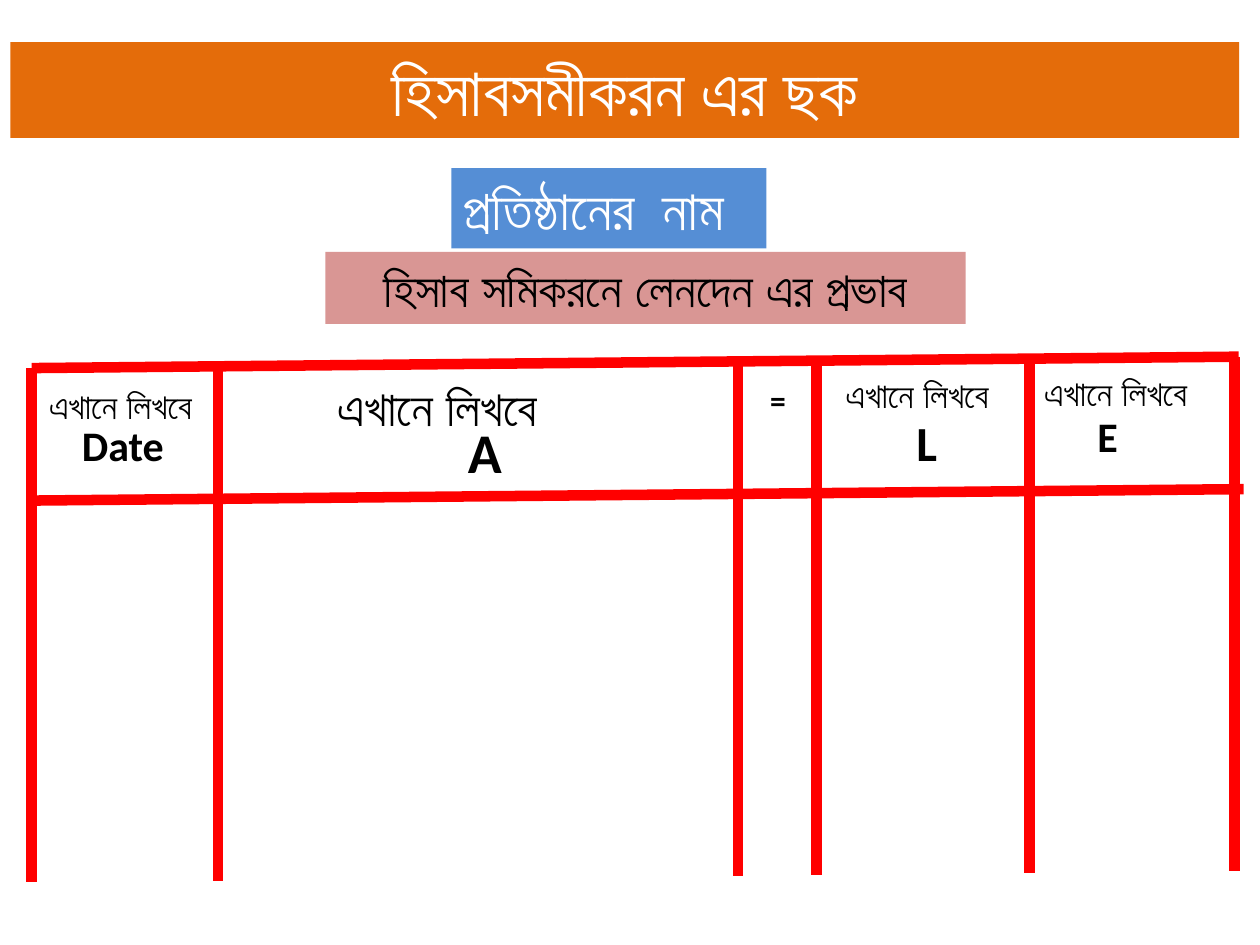
from lxml import etree
from pptx import Presentation
from pptx.dml.color import RGBColor
from pptx.enum import shapes, text
from pptx.oxml.ns import qn
from pptx.util import Cm, Pt

WHITE = RGBColor(0xFF, 0xFF, 0xFF)
BLACK = RGBColor(0, 0, 0)
RED = RGBColor(0xFF, 0, 0)
ORANGE = RGBColor(0xE4, 0x6C, 0x0A)
BLUE = RGBColor(0x55, 0x8E, 0xD5)
PINK = RGBColor(0xD9, 0x96, 0x94)

HINT = "এখানে লিখবে"
LEFT = text.PP_ALIGN.LEFT
MID = text.PP_ALIGN.CENTER

# Ledger frame: the top rule climbs slightly to the right, columns hang from it
START, END = 0.64, 24.97
TOP, RISE = 7.42, 0.23
DEPTH = 10.37
COLS = (START, 4.39, 14.88, 16.46, 20.75, 24.89)


def write(shape, words, size, font="Lato", color=BLACK, bold=False, align=LEFT):
    frame = shape.text_frame
    frame.word_wrap = True
    frame.vertical_anchor = text.MSO_ANCHOR.TOP
    para = frame.paragraphs[0]
    para.alignment = align
    run = para.add_run()
    run.text = words
    run.font.name = font
    run.font.size = Pt(size)
    run.font.bold = bold
    run.font.color.rgb = color


def banner(slide, box, fill, words, size, **style):
    shape = slide.shapes.add_shape(shapes.MSO_SHAPE.RECTANGLE, *map(Cm, box))
    shape.shadow.inherit = False
    shape.fill.solid()
    shape.fill.fore_color.rgb = fill
    shape.line.fill.background()
    write(shape, words, size, **style)


def label(slide, box, words, size, **style):
    write(slide.shapes.add_textbox(*map(Cm, box)), words, size, bold=True, **style)


def rule(slide, *ends):
    line = slide.shapes.add_connector(shapes.MSO_CONNECTOR.STRAIGHT, *map(Cm, ends))
    line.line.color.rgb = RED
    line.line.width = Pt(6)
    etree.SubElement(line._element.spPr, qn("a:effectLst"))


def ledger(slide):
    rule(slide, START, TOP, END, TOP - RISE)
    rule(slide, START + 0.1, TOP + 2.67, END + 0.1, TOP + 2.67 - RISE)
    for x in COLS:
        y = TOP - RISE * (x - START) / (END - START)
        rule(slide, x, y, x, y + DEPTH)


def heads(slide):
    for box, size in (
        ((0.74, 7.62, 4.45, 1.11), 20),
        ((6.56, 7.49, 5.72, 1.45), 28),
        ((16.8, 7.41, 3.91, 1.11), 20),
        ((20.8, 7.37, 4.45, 1.11), 20),
    ):
        label(slide, box, HINT, size)
    for box, words, size, align in (
        ((1.4, 8.33, 2.75, 1.28), "Date", 24, LEFT),
        ((8.08, 8.3, 3.39, 1.62), "A", 32, MID),
        ((14.86, 7.55, 1.65, 1.03), "=", 18, MID),
        ((17.83, 8.19, 1.7, 1.45), "L", 28, MID),
        ((21.49, 8.15, 1.68, 1.28), "E", 24, MID),
    ):
        label(slide, box, words, size, font="Calibri", align=align)


def main():
    deck = Presentation()
    deck.slide_width, deck.slide_height = Cm(25.4), Cm(19.05)
    slide = deck.slides.add_slide(deck.slide_layouts[6])
    banner(slide, (0.21, 0.85, 24.77, 1.93), ORANGE,
           "হিসাবসমীকরন এর ছক", 39, color=WHITE, align=MID)
    banner(slide, (9.1, 3.39, 6.35, 1.62), BLUE,
           "প্রতিষ্ঠানের  নাম", 32, color=WHITE)
    banner(slide, (6.56, 5.08, 12.91, 1.45), PINK,
           "হিসাব সমিকরনে লেনদেন এর প্রভাব", 28, bold=True, align=MID)
    ledger(slide)
    heads(slide)
    deck.save("out.pptx")


if __name__ == "__main__":
    main()
